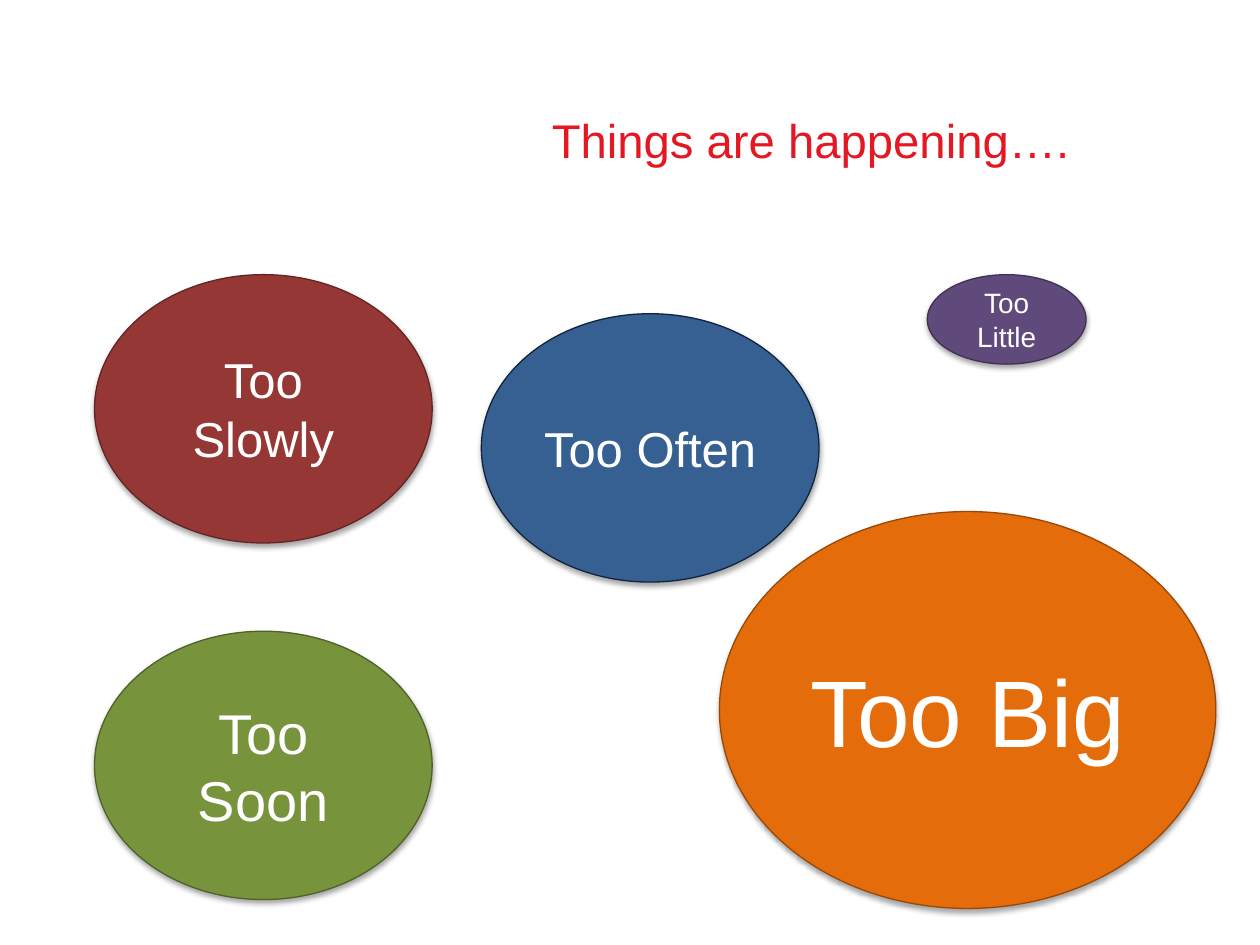
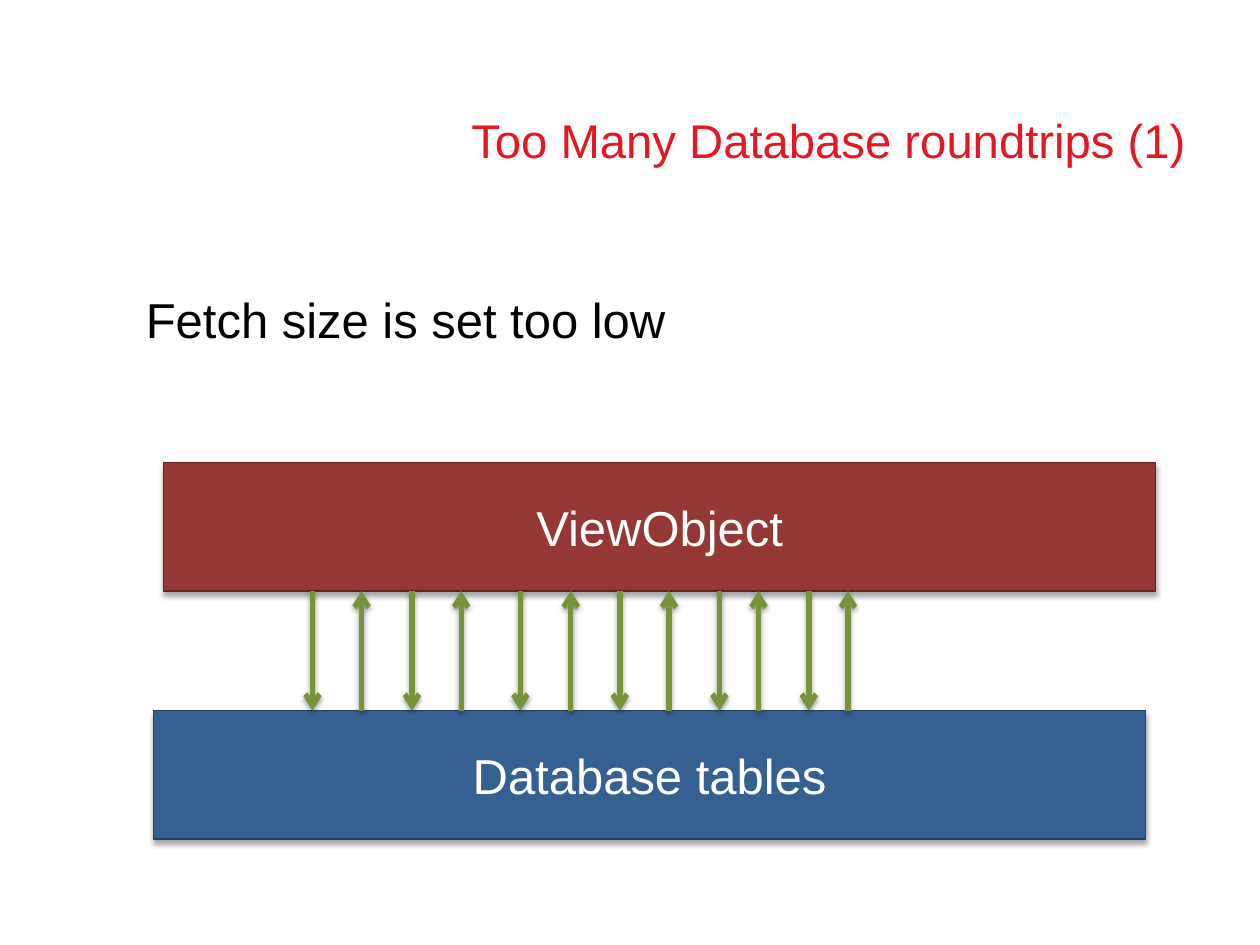
import pptx
import pptx.dml.color
import pptx.enum.shapes
import pptx.enum.text
import pptx.oxml.ns
import pptx.util
from lxml import etree

Inches = pptx.util.Inches
Pt = pptx.util.Pt
RGB = pptx.dml.color.RGBColor.from_string
qn = pptx.oxml.ns.qn
SHAPE = pptx.enum.shapes.MSO_SHAPE
ALIGN = pptx.enum.text.PP_ALIGN
MIDDLE = pptx.enum.text.MSO_ANCHOR.MIDDLE

COLORS = {
    "title": "E31823", "white": "FFFFFF", "black": "000000",
    "green": "77933C", "green edge": "4F6228",
    "blue": "376092", "blue edge": "0F243E", "table edge": "254061",
    "red": "953735", "red edge": "632523",
    "purple": "604A7B", "purple edge": "403152",
    "orange": "E46C0A", "orange edge": "984807",
}


def write_text(shape, text, size, color, align):
    para = shape.text_frame.paragraphs[0]
    para.text = text
    para.alignment = align
    para.font.name = "Arial"
    para.font.size = Pt(size)
    para.font.color.rgb = RGB(COLORS[color])
    return para


def add_shadow(shape, opacity, distance):
    """Drop a soft black shadow straight down; call after the line is set."""
    effects = etree.SubElement(shape.element.spPr, qn("a:effectLst"))
    shadow = etree.SubElement(
        effects, qn("a:outerShdw"), blurRad=str(Pt(3.1)), dist=str(Pt(distance)),
        dir="5400000", rotWithShape="0")
    black = etree.SubElement(shadow, qn("a:srgbClr"), val=COLORS["black"])
    etree.SubElement(black, qn("a:alpha"), val=str(opacity * 1000))


deck = pptx.Presentation()
deck.slide_width, deck.slide_height = Inches(10), Inches(7.5)

# Pages and their titles
titles = [
    ("Things are happening….", 4.38, 5.26),
    ("Too Many Database roundtrips (1)", 3.74, 5.91),
]
for text, left, width in titles:
    page = deck.slides.add_slide(deck.slide_layouts[6])
    title = page.shapes.add_textbox(Inches(left), Inches(0.6), Inches(width), Inches(1.08))
    frame = title.text_frame
    frame.word_wrap = True
    frame.vertical_anchor = MIDDLE
    frame.margin_left = frame.margin_right = frame.margin_top = frame.margin_bottom = 0
    write_text(title, text, 27, "title", ALIGN.LEFT).line_spacing = Pt(28)

problems, roundtrips = deck.slides

# Filled ovals and bars
oval, bar = (2.68, 2.13), (7.87, 1.02)
tables_top, view_top = 5.64, 3.67
blocks = [
    (problems, SHAPE.OVAL, "Too Soon", 32, (0.75, 5.01), oval, "green", "green edge"),
    (problems, SHAPE.OVAL, "Too Often", 28, (3.82, 2.49), oval, "blue", "blue edge"),
    (problems, SHAPE.OVAL, "Too Slowly", 28, (0.75, 2.18), oval, "red", "red edge"),
    (problems, SHAPE.OVAL, "Too Little", 16, (7.36, 2.18), (1.26, 0.71), "purple", "purple edge"),
    (problems, SHAPE.OVAL, "Too Big", 54, (5.71, 4.06), (3.94, 3.15), "orange", "orange edge"),
    (roundtrips, SHAPE.RECTANGLE, "Database tables", 28, (1.22, tables_top), bar, "blue", "table edge"),
    (roundtrips, SHAPE.RECTANGLE, "ViewObject", 28, (1.3, view_top), bar, "red", "red edge"),
]
for page, kind, text, size, corner, extent, fill, edge in blocks:
    block = page.shapes.add_shape(kind, *map(Inches, corner + extent))
    block.fill.solid()
    block.fill.fore_color.rgb = RGB(COLORS[fill])
    block.line.color.rgb = RGB(COLORS[edge])
    block.line.width = Pt(0.75)
    add_shadow(block, 35, 1.8)
    block.text_frame.vertical_anchor = MIDDLE
    write_text(block, text, size, "white", ALIGN.CENTER)

cause = roundtrips.shapes.add_textbox(Inches(1.06), Inches(2.25), Inches(4.37), Inches(0.57))
cause.text_frame.word_wrap = False
write_text(cause, "Fetch size is set too low", 28, "black", ALIGN.LEFT)

# Requests go down to the tables, answers come back up
view_bottom = view_top + bar[1]
arrow_lefts = [2.48, 2.87, 3.27, 3.66, 4.13, 4.53, 4.92, 5.31, 5.71, 6.02, 6.42, 6.73]
for index, left in enumerate(arrow_lefts):
    start, end = (view_bottom, tables_top) if index % 2 == 0 else (tables_top, view_bottom)
    arrow = roundtrips.shapes.add_connector(
        pptx.enum.shapes.MSO_CONNECTOR.STRAIGHT,
        Inches(left), Inches(start), Inches(left), Inches(end))
    arrow.line.color.rgb = RGB(COLORS["green"])
    arrow.line.width = Pt(3)
    etree.SubElement(arrow.element.spPr.find(qn("a:ln")), qn("a:tailEnd"), type="arrow")
    add_shadow(arrow, 38, 1.6)

deck.save("out.pptx")
